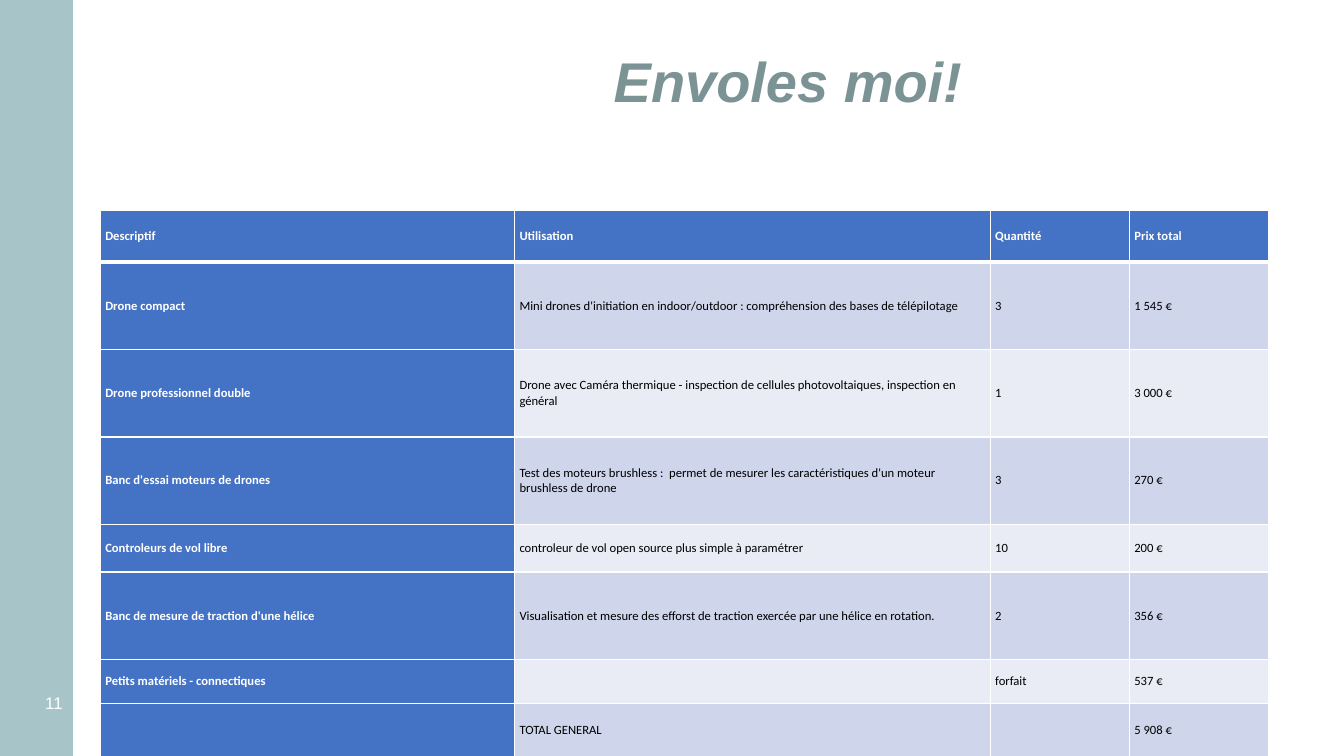
import dataclasses

import lxml.etree
import pptx
import pptx.dml.color
import pptx.enum.shapes
import pptx.enum.text
import pptx.oxml.ns
import pptx.util

Pt = pptx.util.Pt
Align = pptx.enum.text.PP_ALIGN
Anchor = pptx.enum.text.MSO_ANCHOR

HUES = {
    "band": "A7C5C8",
    "title": "7C9396",
    "head": "4472C4",
    "odd": "CFD5EA",
    "even": "E9EBF5",
    "white": "FFFFFF",
    "black": "000000",
}


@dataclasses.dataclass
class Item:
    name: str
    use: str
    count: str
    price: str
    height: float

    def texts(self) -> list[str]:
        return [self.name, self.use, self.count, self.price]


WIDTHS = [295.9, 339.8, 99.4, 99.4]
ITEMS = [
    Item("Descriptif", "Utilisation", "Quantité", "Prix total", 36.7),
    Item("Drone compact",
         "Mini drones d'initiation en indoor/outdoor : compréhension des bases de télépilotage",
         "3", "1 545 €", 62.5),
    Item("Drone professionnel double",
         "Drone avec Caméra thermique - inspection de cellules photovoltaiques, inspection en général",
         "1", "3 000 €", 62.5),
    Item("Banc d'essai moteurs de drones",
         "Test des moteurs brushless :  permet de mesurer les caractéristiques d'un moteur brushless de drone",
         "3", "270 €", 62.5),
    Item("Controleurs de vol libre",
         "controleur de vol open source plus simple à paramétrer",
         "10", "200 €", 34),
    Item("Banc de mesure de traction d'une hélice",
         "Visualisation et mesure des efforst de traction exercée par une hélice en rotation.",
         "2", "356 €", 62.5),
    Item("Petits matériels - connectiques", "", "forfait", "537 €", 31.2),
    Item("", "TOTAL GENERAL", "", "5 908 €", 38),
]


def color(hue: str) -> pptx.dml.color.RGBColor:
    return pptx.dml.color.RGBColor.from_string(HUES[hue])


def write(frame, text: str, *, size: float, hue: str, font: str = "Arial",
          bold: bool = False, slant: bool = False, align=Align.LEFT,
          indent: float = 0, lines: float = 1.0) -> None:
    para = frame.paragraphs[0]
    para.alignment = align
    para.line_spacing = lines
    if indent:
        para._p.get_or_add_pPr().set("marL", str(Pt(indent)))
    style = para.font
    if text:
        run = para.add_run()
        run.text = text
        style = run.font
    style.name = font
    style.size = Pt(size)
    style.bold = bold
    style.italic = slant
    style.color.rgb = color(hue)


def add_box(slide, left: float, top: float, width: float, height: float,
            anchor=Anchor.TOP):
    box = slide.shapes.add_textbox(Pt(left), Pt(top), Pt(width), Pt(height))
    frame = box.text_frame
    frame.word_wrap = True
    frame.vertical_anchor = anchor
    return frame


def add_edge(cell, side: str, width: float) -> None:
    props = cell._tc.get_or_add_tcPr()
    name = pptx.oxml.ns.qn
    line = lxml.etree.SubElement(props, name(f"a:ln{side}"), w=str(Pt(width)))
    fill = lxml.etree.SubElement(line, name("a:solidFill"))
    lxml.etree.SubElement(fill, name("a:srgbClr"), val=HUES["white"])


def fill_cell(cell, text: str, row: int, col: int) -> None:
    lead = row == 0 or col == 0
    cell.margin_left = cell.margin_right = Pt(3.6)
    cell.margin_top = cell.margin_bottom = 0
    cell.vertical_anchor = Anchor.MIDDLE
    # A thick rule parts the header from the body
    edges = {"L": 1, "R": 1, "T": 3 if row == 1 else 1, "B": 3 if row == 0 else 1}
    for side, width in edges.items():
        add_edge(cell, side, width)
    cell.fill.solid()
    cell.fill.fore_color.rgb = color("head" if lead else "odd" if row % 2 else "even")
    write(cell.text_frame, text, size=9, font="Calibri", bold=lead,
          hue="white" if lead else "black")


def add_grid(slide, left: float, top: float) -> None:
    high = sum(item.height for item in ITEMS)
    table = slide.shapes.add_table(len(ITEMS), len(WIDTHS), Pt(left), Pt(top),
                                   Pt(sum(WIDTHS)), Pt(high)).table
    for col, width in enumerate(WIDTHS):
        table.columns[col].width = Pt(width)
    for row, item in enumerate(ITEMS):
        table.rows[row].height = Pt(item.height)
        for col, text in enumerate(item.texts()):
            fill_cell(table.cell(row, col), text, row, col)


def main() -> None:
    deck = pptx.Presentation()
    deck.slide_width, deck.slide_height = Pt(960), Pt(540)
    slide = deck.slides.add_slide(deck.slide_layouts[6])

    # Side band
    band = slide.shapes.add_shape(pptx.enum.shapes.MSO_SHAPE.RECTANGLE,
                                  Pt(-1.4), Pt(0), Pt(53.5), Pt(541.4))
    band.shadow.inherit = False
    band.fill.solid()
    band.fill.fore_color.rgb = color("band")
    band.line.fill.background()

    # Title
    title = add_box(slide, 71.3, 35.3, 833.8, 471.6)
    write(title, "Envoles moi!", size=40, hue="title", bold=True, slant=True,
          indent=360, lines=0.9)

    # Page number
    page = add_box(slide, 0, 488.9, 51.8, 25.9, Anchor.MIDDLE)
    write(page, "11", size=12, hue="white", align=Align.RIGHT)

    # Budget table
    add_grid(slide, 71.6, 150.5)

    deck.save("out.pptx")


if __name__ == "__main__":
    main()
